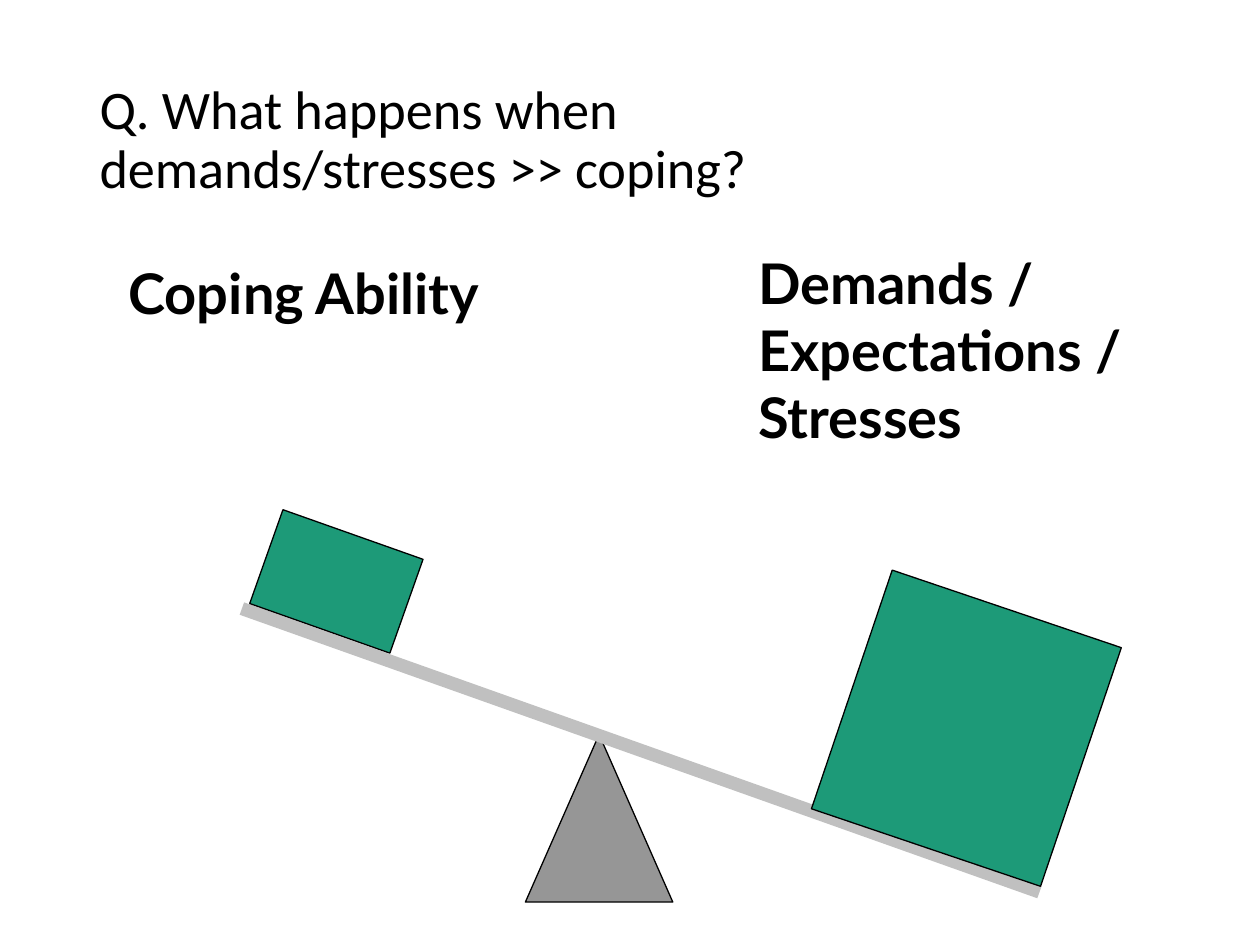
from lxml import etree
from pptx import Presentation
from pptx import util as u
from pptx.dml.color import RGBColor
from pptx.enum import shapes, text
from pptx.oxml.ns import qn

COLORS = {"black": "000000", "weight": "1D9A78", "pivot": "969696", "beam": "C0C0C0"}

# Content: lengths in inches as left, top, width, height
TITLE = "Q. What happens when \vdemands/stresses >> coping?"
TITLE_BOX = (0.69, 0.4, 8.62, 1.45)
LABELS = [  # lines, box, wrap
    (["Demands /", "Expectations /", "Stresses"], (5.92, 1.92, 3.18, 1.7), False),
    (["Coping Ability"], (0.92, 2, 3.09, 0.63), True),
]
PIVOT = (4.17, 5.83, 1.17, 1.33)
BEAM = (1.92, 4.83, 8.25, 7.08)  # from x, y to x, y
WEIGHTS = [  # box, rotation
    ((2.08, 4.22, 1.18, 0.79), 19.5),  # coping ability
    ((6.71, 4.78, 1.92, 2), 18.7),  # demands
]


def inches(values):
    return [u.Inches(v) for v in values]


def rgb(name):
    return RGBColor.from_string(COLORS[name])


def set_font(p, **fmt):
    for key, value in fmt.items():
        setattr(p.font, key, value)
    p.font.color.rgb = rgb("black")


def add_solid(slide, kind, box, fill, rotation=0):
    sp = slide.shapes.add_shape(kind, *inches(box))
    sp.shadow.inherit = False
    sp.rotation = rotation
    sp.fill.solid()
    sp.fill.fore_color.rgb = rgb(fill)
    sp.line.color.rgb = rgb("black")
    sp.line.width = u.Pt(0.75)


def add_label(slide, lines, box, wrap):
    tf = slide.shapes.add_textbox(*inches(box)).text_frame
    tf.word_wrap = wrap
    tf.auto_size = text.MSO_AUTO_SIZE.SHAPE_TO_FIT_TEXT
    tf.text = "\n".join(lines)
    for p in tf.paragraphs:
        set_font(p, name="Lato", size=u.Pt(32), bold=True)


def main():
    prs = Presentation()
    prs.slide_width, prs.slide_height = inches((10, 7.5))
    slide = prs.slides.add_slide(prs.slide_layouts[5])

    # Title
    title = slide.shapes.title
    title.left, title.top, title.width, title.height = inches(TITLE_BOX)
    tf = title.text_frame
    tf.text = TITLE
    tf.vertical_anchor = text.MSO_ANCHOR.MIDDLE
    p = tf.paragraphs[0]
    p.alignment = text.PP_ALIGN.LEFT
    p.line_spacing = 0.9
    set_font(p, name="Calibri", size=u.Pt(31))

    # Seesaw: pivot, then beam across its tip
    add_solid(slide, shapes.MSO_SHAPE.ISOSCELES_TRIANGLE, PIVOT, "pivot")
    beam = slide.shapes.add_connector(shapes.MSO_CONNECTOR.STRAIGHT, *inches(BEAM))
    beam.line.color.rgb = rgb("beam")
    beam.line.width = u.Pt(7.5)
    etree.SubElement(beam._element.spPr, qn("a:effectLst"))

    # Labels and weights
    for label in LABELS:
        add_label(slide, *label)
    for box, rotation in WEIGHTS:
        add_solid(slide, shapes.MSO_SHAPE.RECTANGLE, box, "weight", rotation)

    prs.save("out.pptx")


if __name__ == "__main__":
    main()
